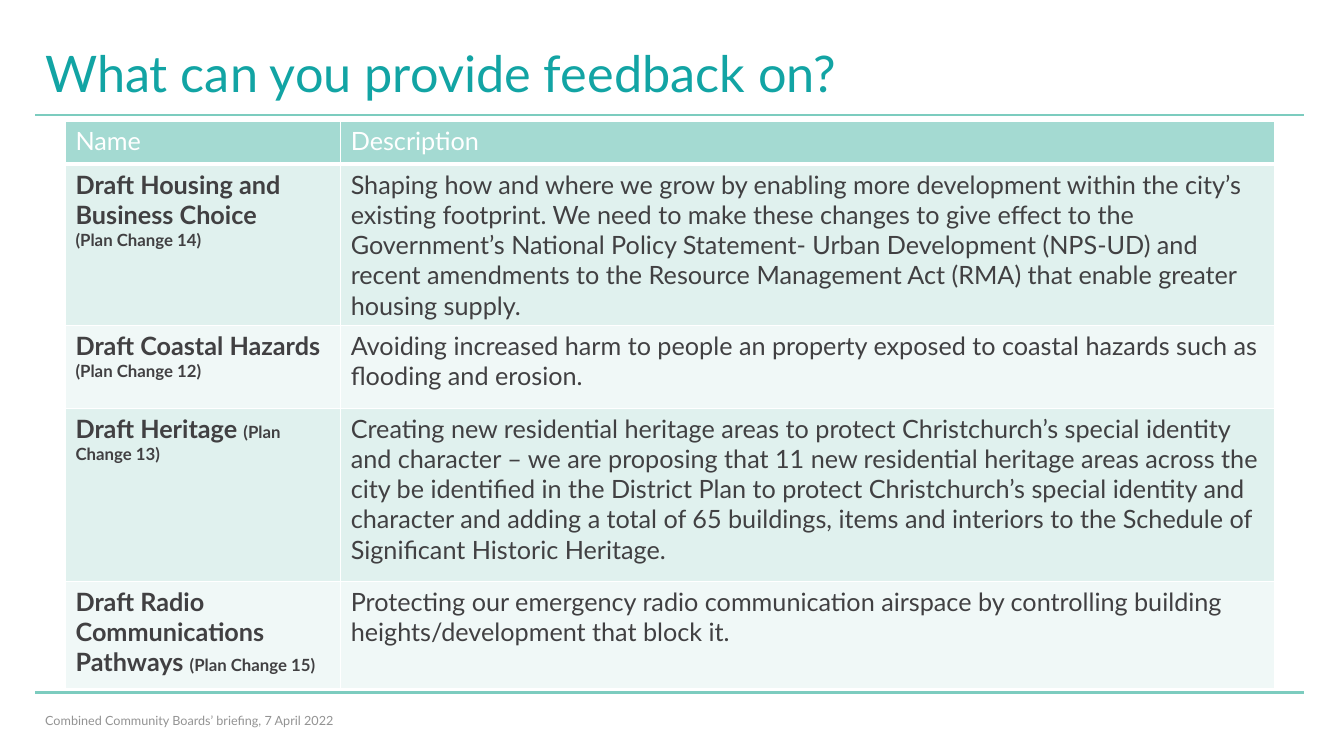
import pptx
import pptx.util
import pptx.dml.color
import pptx.enum.shapes
import pptx.enum.text
import pptx.oxml.ns
import lxml.etree

deck = pptx.Presentation()
deck.slide_width = pptx.util.Inches(13.33)
deck.slide_height = pptx.util.Inches(7.5)
column = deck.slide_width / 40
row = deck.slide_height / 30
page = deck.slides.add_slide(deck.slide_layouts[6])


def paint(target, colour):
    target.rgb = pptx.dml.color.RGBColor.from_string(colour)


def write(para, text, size, colour, bold=False):
    span = para.add_run()
    span.text = text
    style = {"name": "Lato", "size": pptx.util.Pt(size), "bold": bold}
    for name, value in style.items():
        setattr(span.font, name, value)
    paint(span.font.color, colour)


for level in (4.56, 27.48):
    rule = page.shapes.add_connector(
        pptx.enum.shapes.MSO_CONNECTOR.STRAIGHT,
        int(1.05 * column), int(level * row), int(38.82 * column), int(level * row))
    paint(rule.line.color, "7CCCBF")
    rule.line.width = pptx.util.Pt(1.5)
    properties = rule.element.find(pptx.oxml.ns.qn("p:spPr"))
    lxml.etree.SubElement(properties, pptx.oxml.ns.qn("a:effectLst"))

captions = [
    ("What can you provide feedback on?", 1.6, 37.8, 2.88, 36, "12A4A4", 0.9),
    ("Combined Community Boards’ briefing, 7 April 2022", 27.8, 15.09, 1.6, 9, "939393", 1.0),
]
for text, top, width, height, size, colour, spacing in captions:
    box = page.shapes.add_textbox(
        int(1.05 * column), int(top * row), int(width * column), int(height * row))
    frame = box.text_frame
    frame.word_wrap = True
    frame.vertical_anchor = pptx.enum.text.MSO_ANCHOR.MIDDLE
    frame.paragraphs[0].line_spacing = spacing
    write(frame.paragraphs[0], text, size, colour)

plan_changes = [
    ([[("Name", 18)]], "Description", 1.72),
    ([[("Draft Housing and Business Choice", 18)], [("(Plan Change 14)", 12)]],
     "Shaping how and where we grow by enabling more development within the city’s "
     "existing footprint. We need to make these changes to give effect to the "
     "Government’s National Policy Statement- Urban Development (NPS-UD) and recent "
     "amendments to the Resource Management Act (RMA) that enable greater housing supply.",
     5.6),
    ([[("Draft Coastal Hazards", 18)], [("(Plan Change 12)", 12)]],
     "Avoiding increased harm to people an property exposed to coastal hazards such as "
     "flooding and erosion.", 3.28),
    ([[("Draft Heritage ", 18), ("(Plan Change 13)", 12)]],
     "Creating new residential heritage areas to protect Christchurch’s special identity "
     "and character – we are proposing that 11 new residential heritage areas across the "
     "city be identified in the District Plan to protect Christchurch’s special identity "
     "and character and adding a total of 65 buildings, items and interiors to the "
     "Schedule of Significant Historic Heritage.", 6.88),
    ([[("Draft Radio Communications Pathways ", 18), ("(Plan Change 15)", 12)]],
     "Protecting our emergency radio communication airspace by controlling building "
     "heights/development that block it.", 4.24),
]
widths = (8.19, 27.81)
table = page.shapes.add_table(
    len(plan_changes), len(widths), int(1.95 * column), int(4.8 * row),
    int(sum(widths) * column), int(sum(change[2] for change in plan_changes) * row)).table
table.horz_banding = False
for index, width in enumerate(widths):
    table.columns[index].width = int(width * column)

for index, (name, description, height) in enumerate(plan_changes):
    table.rows[index].height = int(height * row)
    header = index == 0
    fill = "A4DAD2" if header else ("F0F8F7", "E0F1EE")[index % 2]
    colour = "FFFFFF" if header else "414042"
    for position, content in enumerate((name, [[(description, 18)]])):
        cell = table.cell(index, position)
        cell_properties = cell._tc.get_or_add_tcPr()
        for side in ("lnL", "lnR", "lnT", "lnB"):
            weight = 3 if header and side == "lnB" else 1
            border = lxml.etree.SubElement(
                cell_properties, pptx.oxml.ns.qn("a:" + side), w=str(pptx.util.Pt(weight)))
            solid = lxml.etree.SubElement(border, pptx.oxml.ns.qn("a:solidFill"))
            lxml.etree.SubElement(solid, pptx.oxml.ns.qn("a:srgbClr"), val="FFFFFF")
        cell.fill.solid()
        paint(cell.fill.fore_color, fill)
        for order, spans in enumerate(content):
            frame = cell.text_frame
            para = frame.add_paragraph() if order else frame.paragraphs[0]
            for text, size in spans:
                write(para, text, size, colour, bold=position == 0 and not header)

deck.save("out.pptx")
